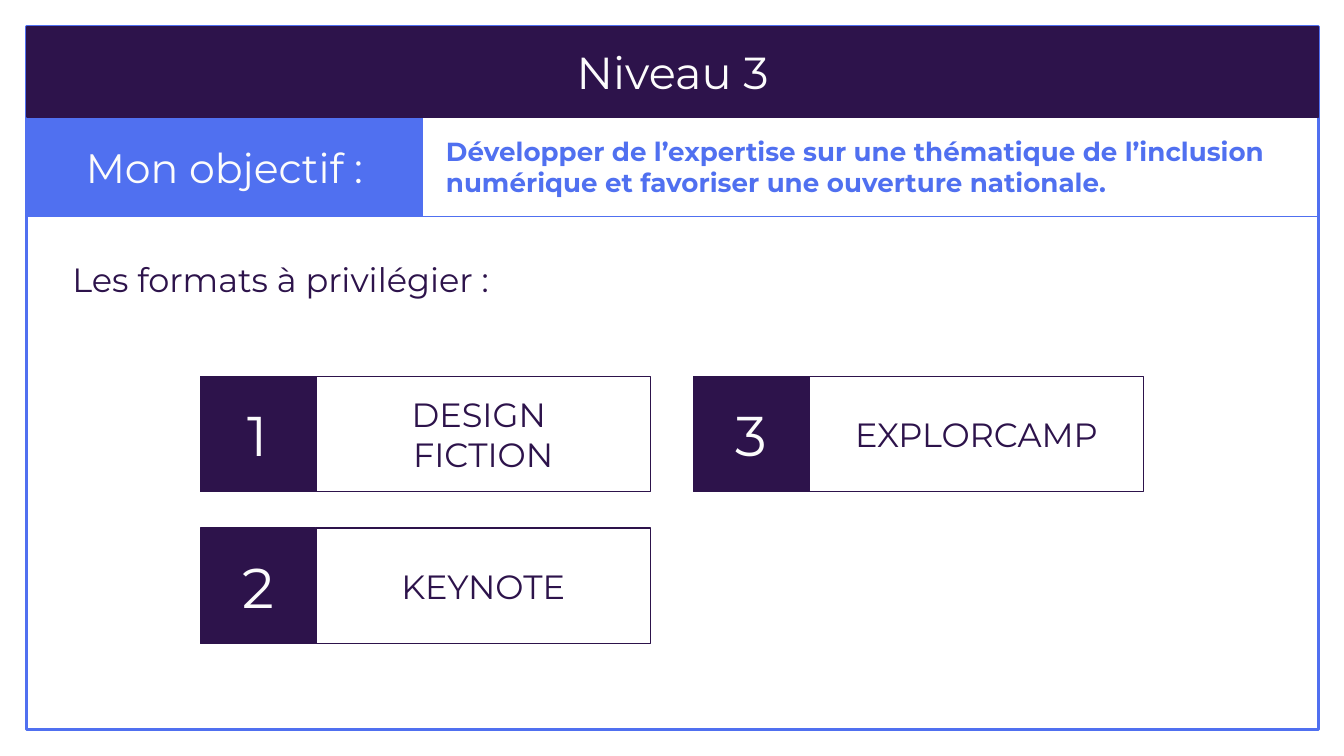
from pptx import Presentation
from pptx.dml.color import RGBColor
from pptx.enum.shapes import MSO_SHAPE
from pptx.enum.text import MSO_ANCHOR, PP_ALIGN
from pptx.util import Inches, Pt

TITLE = "Niveau 3"
GOAL = "Mon objectif :"
AIM = ("Développer de l’expertise sur une thématique de l’inclusion "
       "numérique et favoriser une ouverture nationale.")
LEAD = "Les formats à privilégier :"
CARDS = [("1", "DESIGN \nFICTION"), ("2", "KEYNOTE"), ("3", "EXPLORCAMP")]

INK = {"blue": "5070F0", "plum": "2D134B", "white": "FCFCFC"}
FONT = "Montserrat"
WIDE = 10
HIGH = WIDE * 9 / 16
EDGE = 0.2
SPAN, DEPTH = 9.61, 5.23
HEAD, BAND = 0.67, 0.74
SIDE = 2.94
LEFT, TOP = 1.49, 2.8
TILE, LABEL = 0.86, 2.49
STEP_X, STEP_Y = 3.67, 1.13
ROWS = 2

deck = Presentation()
deck.slide_width, deck.slide_height = Inches(WIDE), Inches(HIGH)
slide = deck.slides.add_slide(deck.slide_layouts[6])


def color(name):
    return RGBColor.from_string(INK[name])


def write(shape, text, size=18, ink="plum", bold=False, indent=None):
    frame = shape.text_frame
    frame.word_wrap = True
    frame.vertical_anchor = MSO_ANCHOR.MIDDLE
    frame.margin_left = frame.margin_right = Inches(0.1)
    frame.margin_top = frame.margin_bottom = Inches(0.1)
    para = frame.paragraphs[0]
    para.text = text
    para.alignment = PP_ALIGN.CENTER if indent is None else PP_ALIGN.LEFT
    if indent is not None:
        props = para._p.get_or_add_pPr()
        props.set("marL", str(Inches(indent)))
        props.set("indent", "0")
    for run in para.runs:
        run.font.name, run.font.size = FONT, Pt(size)
        run.font.bold = bold
        run.font.color.rgb = color(ink)


def box(x, y, w, h, line, fill=None, width=0.75):
    shape = slide.shapes.add_shape(
        MSO_SHAPE.RECTANGLE, Inches(x), Inches(y), Inches(w), Inches(h))
    shape.shadow.inherit = False
    if fill:
        shape.fill.solid()
        shape.fill.fore_color.rgb = color(fill)
    else:
        shape.fill.background()
    shape.line.color.rgb = color(line)
    shape.line.width = Pt(width)
    return shape


body = EDGE + HEAD
box(EDGE, EDGE, SPAN, DEPTH, "blue", width=1.5)
write(box(EDGE, body, SIDE, BAND, "blue", "blue"), GOAL, size=22, ink="white")
write(box(EDGE + SIDE, body, SPAN - SIDE, BAND, "blue"), AIM,
      size=14, ink="blue", bold=True, indent=0.08)
write(box(EDGE, EDGE, SPAN, HEAD, "plum", "plum"), TITLE, size=24, ink="white")
lead = slide.shapes.add_textbox(
    Inches(EDGE), Inches(body + BAND + 0.1), Inches(5.75), Inches(BAND))
write(lead, LEAD, indent=0.24)

for i, (num, name) in enumerate(CARDS):
    col, row = divmod(i, ROWS)
    x, y = LEFT + col * STEP_X, TOP + row * STEP_Y
    write(box(x + TILE, y, LABEL, TILE, "plum"), name)
    write(box(x, y, TILE, TILE, "plum", "plum"), num, size=30, ink="white")

deck.save("out.pptx")
